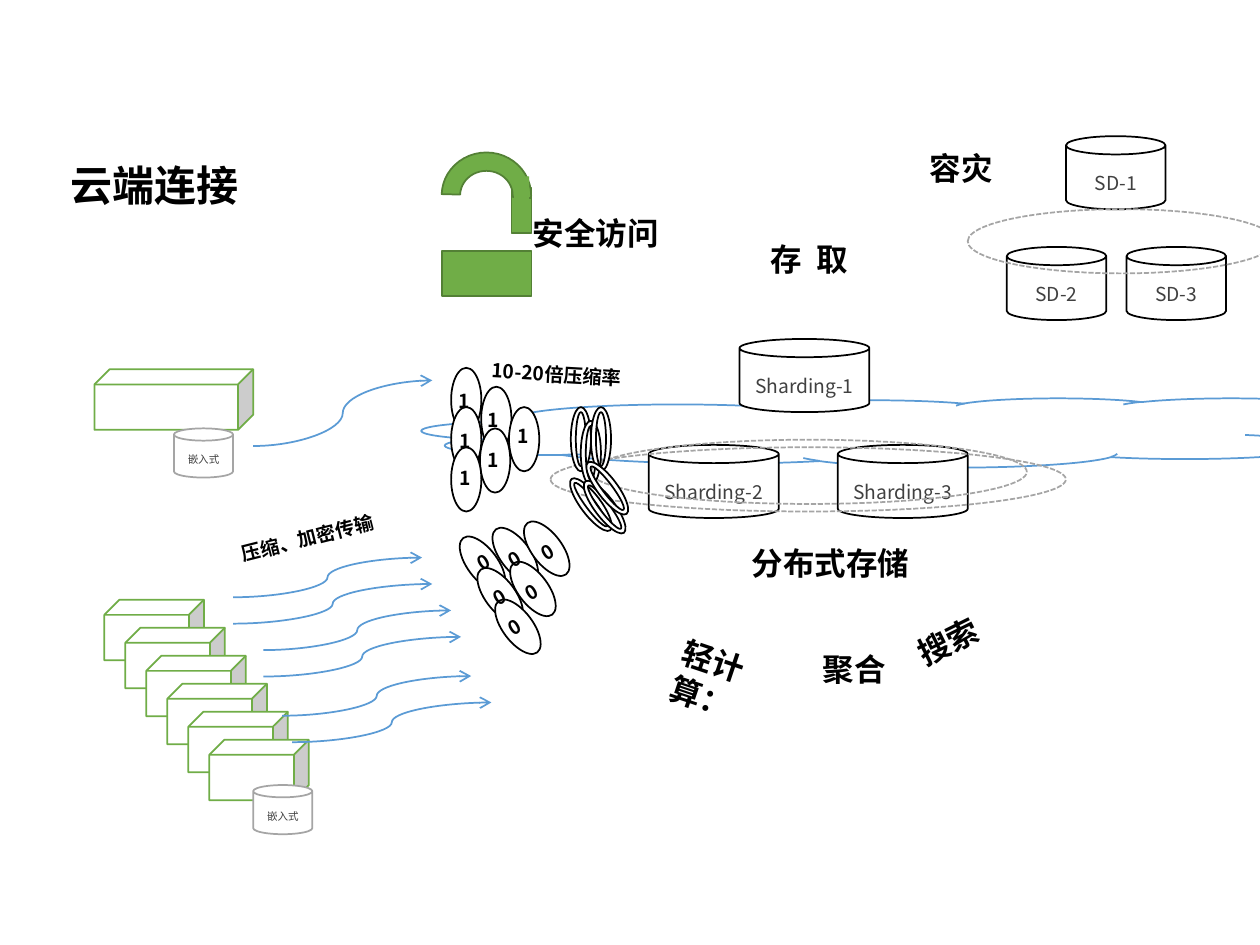
"""Build the slide on cloud connection, secure access and distributed storage."""
from dataclasses import dataclass

from lxml import etree
from pptx import Presentation, util as u
from pptx.dml.color import RGBColor
from pptx.enum import dml, shapes, text
from pptx.oxml.ns import qn

FONT = "Noto Sans CJK SC"
BLACK, WHITE, GREY, DARK_GREY = "000000", "FFFFFF", "A5A5A5", "404040"
BLUE, GREEN, DARK_GREEN = "5B9BD5", "70AD47", "538035"
Kind = shapes.MSO_SHAPE


@dataclass
class Figure:
    kind: Kind
    x: float
    y: float
    width: float
    height: float
    line: str | None = BLACK
    fill: str | None = WHITE
    rotation: float = 0
    adjustments: tuple = ()
    dashed: bool = False


@dataclass
class Can:
    caption: str
    x: float
    y: float
    width: float = 74.2
    height: float = 41.8
    line: str = BLACK
    size: float = 11


@dataclass
class Flow:
    x1: float
    y1: float
    x2: float
    y2: float


@dataclass
class Label:
    caption: str
    x: float
    y: float
    width: float
    height: float = 28.8
    size: float = 18
    rotation: float = 0
    centred: bool = False
    spacing: int = 0


def colour(value: str) -> RGBColor:
    return RGBColor.from_string(value)


def write(box, caption: str, size: float, ink: str, bold: bool = False, spacing: int = 0):
    frame = box.text_frame
    frame.word_wrap = True
    frame.text = caption
    para = frame.paragraphs[0]
    span = para.runs[0]
    span.font.size = u.Pt(size)
    span.font.bold = bold
    span.font.name = FONT
    span.font.color.rgb = colour(ink)
    properties = span._r.get_or_add_rPr()
    etree.SubElement(properties, qn("a:ea"), typeface=FONT)
    if spacing:
        properties.set("spc", str(spacing))
    return para


def draw_figure(page, figure: Figure):
    area = (u.Pt(v) for v in (figure.x, figure.y, figure.width, figure.height))
    box = page.shapes.add_shape(figure.kind, *area)
    box.shadow.inherit = False
    box.rotation = figure.rotation
    for index, value in enumerate(figure.adjustments):
        box.adjustments[index] = value
    if figure.fill:
        box.fill.solid()
        box.fill.fore_color.rgb = colour(figure.fill)
    else:
        box.fill.background()
    if figure.line:
        box.line.color.rgb = colour(figure.line)
        box.line.width = u.Pt(1)
    else:
        box.line.fill.background()
    if figure.dashed:
        box.line.dash_style = dml.MSO_LINE.SQUARE_DOT
    return box


def draw_can(page, can: Can) -> None:
    box = draw_figure(page, Figure(Kind.CAN, can.x, can.y, can.width, can.height, can.line))
    para = write(box, can.caption, can.size, DARK_GREY)
    para.alignment = text.PP_ALIGN.CENTER
    para.line_spacing = 1.5
    box.text_frame.vertical_anchor = text.MSO_ANCHOR.MIDDLE


def draw_flow(page, flow: Flow) -> None:
    ends = (u.Pt(v) for v in (flow.x1, flow.y1, flow.x2, flow.y2))
    curve = page.shapes.add_connector(shapes.MSO_CONNECTOR.CURVE, *ends)
    curve.line.color.rgb = colour(BLUE)
    curve.line.width = u.Pt(1)
    etree.SubElement(curve.line._get_or_add_ln(), qn("a:tailEnd"), type="arrow")
    etree.SubElement(curve._element.spPr, qn("a:effectLst"))


def draw_label(page, label: Label) -> None:
    area = (u.Pt(v) for v in (label.x, label.y, label.width, label.height))
    box = page.shapes.add_textbox(*area)
    box.rotation = label.rotation
    para = write(box, label.caption, label.size, BLACK, True, label.spacing)
    if label.centred:
        para.alignment = text.PP_ALIGN.CENTER
        box.text_frame.vertical_anchor = text.MSO_ANCHOR.MIDDLE
    else:
        box.text_frame.auto_size = text.MSO_AUTO_SIZE.SHAPE_TO_FIT_TEXT


CUBES = [Figure(Kind.CUBE, 54, 211, 90.7, 34.6, GREEN)] + [
    Figure(Kind.CUBE, 59.6 + 12 * i, 342.7 + 16 * i, 56.9, 34.6, GREEN) for i in range(6)]
CANS = [
    Can("嵌入式", 99.4, 244.8, 33.8, 28.1, GREY, 6),
    Can("Sharding-2", 370.8, 254.2), Can("Sharding-3", 478.8, 254.2),
    Can("Sharding-1", 422.6, 193.7),
    Can("SD-2", 575.3, 141.1, 56.9), Can("SD-3", 643.7, 141.1, 56.9),
    Can("SD-1", 609.1, 77.8, 56.9),
    Can("嵌入式", 144.7, 448.6, 33.8, 28.1, GREY, 6)]
FLOWS = [
    Flow(144.7, 254.9, 247, 217.4), Flow(150.5, 371.5, 257.8, 348.8),
    Flow(150.5, 386.6, 263.5, 363.9), Flow(161.3, 409, 269.3, 386.3),
    Flow(167, 424.1, 280.8, 401.4), Flow(133.2, 341.3, 241.2, 318.6),
    Flow(133.2, 356.4, 247, 333.7)]
RINGS = [
    Figure(Kind.OVAL, x, y, width, 36.7, GREY, None, dashed=True)
    for x, y, width in ((337.7, 251.3, 249.1), (553, 119.5, 175.7), (314.6, 255.6, 294.5))]
LOCK = [
    Figure(Kind.RECTANGLE, 292.3, 107.3, 11.5, 25.9, DARK_GREEN, GREEN),
    Figure(Kind.RECTANGLE, 252.7, 143.3, 51.1, 25.9, DARK_GREEN, GREEN),
    Figure(Kind.BLOCK_ARC, 252.4, 87.1, 51.1, 49, DARK_GREEN, GREEN,
           adjustments=(108.93, 2.084, 0.215)),
    Figure(Kind.RECTANGLE, 293.8, 100.8, 8.6, 25.9, None, GREEN)]
TOKENS = [
    Figure(kind, x, y, width, 36.7, rotation=rotation)
    for kind, width, rotation, places in (
        (Kind.DONUT, 11.5, 0, ((326.2, 232.6), (331.9, 240.5), (337.7, 232.6))),
        (Kind.OVAL, 17.3, 0, ((257.8, 210.2), (257.8, 232.6), (275, 221),
                              (274.3, 244.8), (257.8, 255.6), (290.9, 232.6))),
        (Kind.DONUT, 11.5, 323.1, ((331.9, 270), (339.8, 271.4), (341.3, 260.6))),
        (Kind.OVAL, 17.3, 323.1, ((267.1, 303.8), (277.2, 321.8), (285.8, 298.8),
                                  (295.9, 318.2), (287.3, 339.8), (303.8, 295.2))))
    for x, y in places]
DIGITS = [
    Label(digit, x, y, 22.3, 30.2, 11, rotation, True)
    for digit, rotation, places in (
        ("1", 0, ((254.2, 213.8), (270.7, 224.6), (288, 234),
                  (270.7, 247.7), (254.9, 236.9), (254.9, 257.8))),
        ("0", 329.1, ((265, 306), (283, 304.6), (301.7, 300.2),
                      (292.3, 323.3), (274.3, 326.2), (283, 343.4))))
    for x, y in places]
LABELS = [
    Label("云端连接", 33.1, 87.8, 113, 36, 24),
    Label("安全访问", 297.4, 118.8, 90.7),
    Label("容灾", 524.2, 81.4, 79.2),
    Label("存 取", 433.4, 133.9, 79.2, spacing=200),
    Label("分布式存储", 422.6, 307.4, 113),
    Label("轻计算：", 382.3, 365.8, 67.7, rotation=18.6),
    Label("聚合", 463, 367.9, 56.2),
    Label("搜索", 515.5, 347, 72.7, rotation=333.6),
    Label("压缩、加密传输", 121.7, 292.3, 108, 30.2, 11, 345.9, True),
    Label("10-20倍压缩率", 264.2, 198.7, 108, 30.2, 11, 3.4, True)]


def main() -> None:
    deck = Presentation()
    deck.slide_width, deck.slide_height = u.Pt(720), u.Pt(540)
    page = deck.slides.add_slide(deck.slide_layouts[6])
    cloud = Figure(Kind.CLOUD, 241.2, 227.5, 595.4, 39.6, BLUE)
    for draw, items in (
            (draw_figure, [cloud, *CUBES]), (draw_can, CANS), (draw_flow, FLOWS),
            (draw_figure, RINGS + LOCK + TOKENS), (draw_label, DIGITS + LABELS)):
        for item in items:
            draw(page, item)
    deck.save("out.pptx")


if __name__ == "__main__":
    main()
